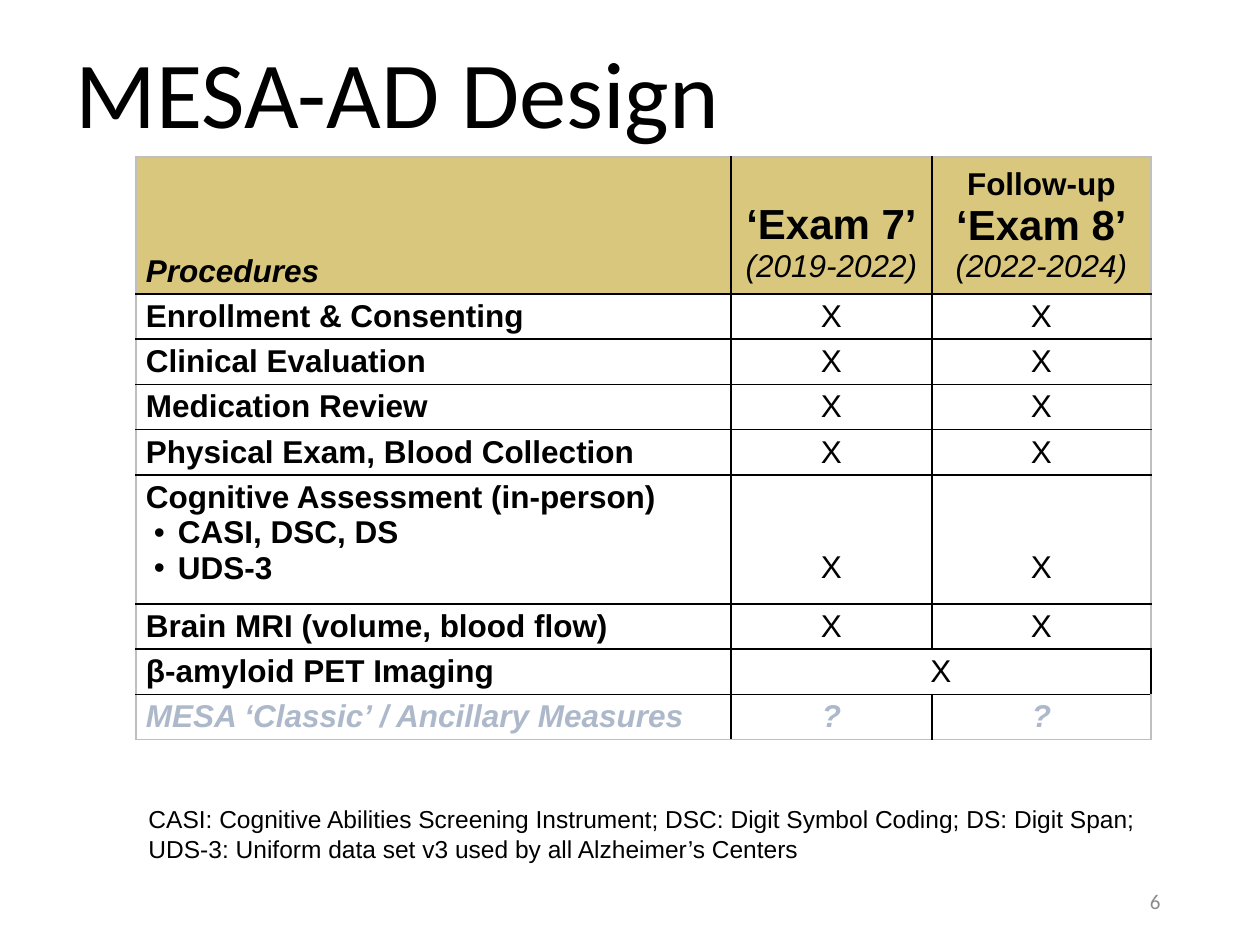
import pptx
import pptx.util
import pptx.dml.color
import pptx.enum.shapes
import pptx.enum.text
import pptx.oxml.ns
import lxml.etree

PX = 914400 / 126
COLORS = {"ink": "000000", "gold": "D9C77D", "muted": "ADB9CA",
          "edge": "BFBFBF", "number": "8C8C8C", "paper": "FFFFFF"}
ALIGN = pptx.enum.text.PP_ALIGN
ANCHOR = pptx.enum.text.MSO_ANCHOR
LINE = 35  # height of one 18 pt line

BOLD = {"bold": True}
ITALIC = {"italic": True}
EXAM = {"bold": True, "size": 24}
MUTED = {"bold": True, "italic": True, "color": "muted"}


def px(n):
    return pptx.util.Emu(round(n * PX))


def rgb(name):
    return pptx.dml.color.RGBColor.from_string(COLORS[name])


def write(tf, lines, align=ALIGN.LEFT):
    """Fill a text frame with (text, style) lines, one paragraph each."""
    tf.text = "\n".join(text for text, style in lines)
    for p, (text, style) in zip(tf.paragraphs, lines):
        p.alignment = align
        for r in p.runs:
            font = r.font
            font.name = style.get("font", "Arial")
            font.size = pptx.util.Pt(style.get("size", 18))
            font.bold = style.get("bold", False)
            font.italic = style.get("italic", False)
            font.color.rgb = rgb(style.get("color", "ink"))


def add_text(slide, box, lines, align=ALIGN.LEFT, anchor=ANCHOR.MIDDLE):
    tb = slide.shapes.add_textbox(*map(px, box))
    tf = tb.text_frame
    tf.word_wrap = True
    tf.vertical_anchor = anchor
    write(tf, lines, align)
    return tf


def add_bullet(p):
    pPr = p._p.get_or_add_pPr()
    pPr.set("marL", str(px(32)))
    pPr.set("indent", str(px(-24)))
    for tag, key, value in (("a:buFont", "typeface", "Arial"), ("a:buChar", "char", "•")):
        lxml.etree.SubElement(pPr, pptx.oxml.ns.qn(tag)).set(key, value)


def set_borders(cell, edges):
    """Draw each side in the named colour; lines must precede the fill."""
    tcPr = cell._tc.get_or_add_tcPr()
    for i, (side, color) in enumerate(edges.items()):
        ln = lxml.etree.Element(pptx.oxml.ns.qn("a:" + side), w="12700")
        fill = lxml.etree.SubElement(ln, pptx.oxml.ns.qn("a:solidFill"))
        lxml.etree.SubElement(fill, pptx.oxml.ns.qn("a:srgbClr")).set("val", COLORS[color])
        tcPr.insert(i, ln)


def fill_cell(cell, lines, align, anchor=ANCHOR.TOP, skip=0):
    """Write a cell, starting the given number of lines below its top."""
    cell.margin_left = cell.margin_right = px(10)
    cell.margin_top = px(5 + skip * LINE)
    cell.margin_bottom = px(5)
    cell.vertical_anchor = anchor
    write(cell.text_frame, lines, align)


def add_procedures(slide, box):
    x, y, w, h = box
    widths = [595, 201, w - 796]
    procedures = ["Enrollment & Consenting", "Clinical Evaluation", "Medication Review",
                  "Physical Exam, Blood Collection",
                  "Cognitive Assessment (in-person)\nCASI, DSC, DS\nUDS-3",
                  "Brain MRI (volume, blood flow)", "β-amyloid PET Imaging",
                  "MESA ‘Classic’ / Ancillary Measures"]
    heights = [137] + [129 if "\n" in name else 45 for name in procedures]
    last_row, last_col = len(procedures), len(widths) - 1
    table = slide.shapes.add_table(last_row + 1, last_col + 1, *map(px, box)).table
    for column, width in zip(table.columns, widths):
        column.width = px(width)
    for row, height in zip(table.rows, heights):
        row.height = px(height)

    # Fills and borders
    for i in range(last_row + 1):
        for j in range(last_col + 1):
            cell = table.cell(i, j)
            if i == 0:
                cell.fill.solid()
                cell.fill.fore_color.rgb = rgb("gold")
            else:
                cell.fill.background()
            set_borders(cell, {"lnL": "ink" if j else "edge",
                               "lnR": "ink" if j < last_col else "edge",
                               "lnT": "ink" if i else "edge",
                               "lnB": "ink" if i < last_row else "edge"})

    # Header
    fill_cell(table.cell(0, 0), [("Procedures", {**BOLD, **ITALIC})], ALIGN.LEFT, ANCHOR.BOTTOM)
    fill_cell(table.cell(0, 1), [("‘Exam 7’", EXAM), ("(2019-2022)", ITALIC)],
              ALIGN.CENTER, ANCHOR.MIDDLE, skip=1)
    fill_cell(table.cell(0, 2), [("Follow-up", BOLD), ("‘Exam 8’", EXAM), ("(2022-2024)", ITALIC)],
              ALIGN.CENTER, ANCHOR.MIDDLE)

    # Procedures and their marks; the PET mark spans both exams
    for i, name in enumerate(procedures, 1):
        last = i == last_row
        lines = name.split("\n")
        fill_cell(table.cell(i, 0), [(s, MUTED if last else BOLD) for s in lines], ALIGN.LEFT)
        for p in table.cell(i, 0).text_frame.paragraphs[1:]:
            add_bullet(p)
        shared = "PET" in name
        if shared:
            table.cell(i, 1).merge(table.cell(i, 2))
        mark = ("?", MUTED) if last else ("X", {})
        for j in (1,) if shared else (1, 2):
            fill_cell(table.cell(i, j), [mark], ALIGN.CENTER, skip=len(lines) - 1)


def add_abbreviations(slide, box):
    sp = slide.shapes.add_shape(pptx.enum.shapes.MSO_SHAPE.RECTANGLE, *map(px, box))
    sp.shadow.inherit = False
    sp.fill.solid()
    sp.fill.fore_color.rgb = rgb("paper")
    sp.line.fill.background()
    tf = sp.text_frame
    tf.word_wrap = True
    tf.vertical_anchor = ANCHOR.TOP
    write(tf, [("CASI: Cognitive Abilities Screening Instrument; DSC: Digit Symbol Coding; "
                "DS: Digit Span;", {"size": 14}),
               ("UDS-3: Uniform data set v3 used by all Alzheimer’s Centers", {"size": 14})])


def main():
    prs = pptx.Presentation()
    prs.slide_width, prs.slide_height = px(1260), px(945)
    slide = prs.slides.add_slide(prs.slide_layouts[6])
    add_procedures(slide, (136, 157, 1015, 586))
    add_abbreviations(slide, (136, 798, 1015, 72))
    # Title
    title = add_text(slide, (63, 38, 1134, 120), [("MESA-AD Design", {"font": "Calibri", "size": 54})])
    title.paragraphs[0].line_spacing = 0.9
    # Slide number
    add_text(slide, (890, 876, 283, 50),
             [("6", {"font": "Calibri", "size": 12, "color": "number"})], ALIGN.RIGHT)
    prs.save("out.pptx")


if __name__ == "__main__":
    main()
